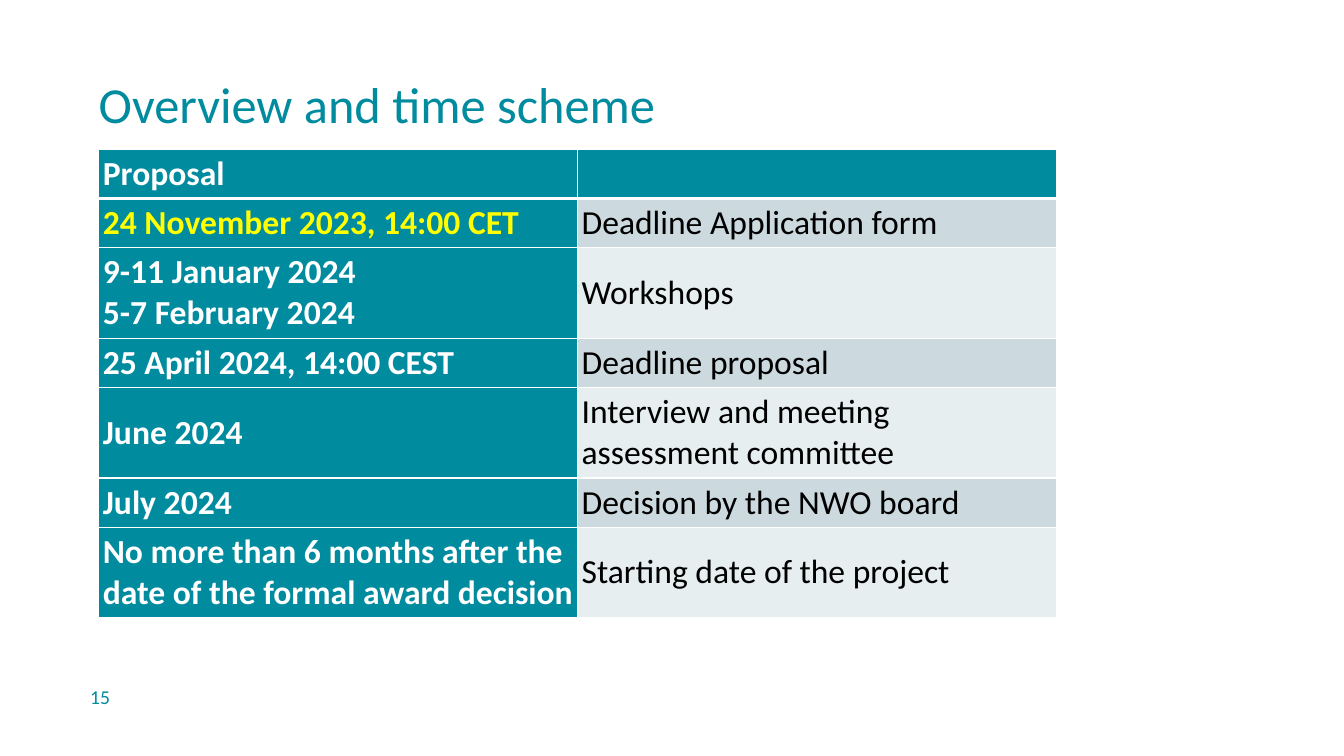
from lxml.etree import SubElement
from pptx import Presentation
from pptx.dml.color import RGBColor
from pptx.enum.text import MSO_ANCHOR as Anchor, MSO_AUTO_SIZE as AutoSize, PP_ALIGN as Align
from pptx.oxml.ns import qn
from pptx.util import Emu, Pt

TEAL, WHITE, BLACK, YELLOW = "008B9F", "FFFFFF", "000000", "FFFF00"
BANDS = ("E7EEF0", "CCDADF")
COL_W, LINE_ROW_H, TWO_LINE_ROW_H = 456, 47, 86

# (left text, right text, row height)
SCHEDULE = [
    ("Proposal", "", LINE_ROW_H),
    ("24 November 2023, 14:00 CET", "Deadline Application form", LINE_ROW_H),
    ("9-11 January 2024\n5-7 February 2024", "Workshops", TWO_LINE_ROW_H),
    ("25 April 2024, 14:00 CEST", "Deadline proposal", LINE_ROW_H),
    ("June 2024", "Interview and meeting assessment committee", TWO_LINE_ROW_H),
    ("July 2024", "Decision by the NWO board", LINE_ROW_H),
    ("No more than 6 months after the date of the formal award decision",
     "Starting date of the project", TWO_LINE_ROW_H),
]


def px(n):
    """Pixels at 96 to the inch, as EMU."""
    return Emu(n * 9525)


def rgb(code):
    return RGBColor.from_string(code)


def write(tf, text, size=24, color=BLACK, bold=False, font="Calibri", spacing=None):
    """Fill a text frame, one paragraph per line of text."""
    for i, line in enumerate(text.split("\n")):
        p = tf.paragraphs[0] if i == 0 else tf.add_paragraph()
        p.alignment = Align.LEFT
        p.line_spacing = spacing
        p.font.size = Pt(size)
        if line:
            r = p.add_run()
            r.text = line
            r.font.name, r.font.size, r.font.bold = font, Pt(size), bold
            r.font.color.rgb = rgb(color)


def set_border(cell, side, width, color=WHITE):
    ln = SubElement(cell._tc.get_or_add_tcPr(), qn(f"a:ln{side}"), w=str(Pt(width)))
    SubElement(SubElement(ln, qn("a:solidFill")), qn("a:srgbClr"), val=color)


class SlideBuilder:
    def __init__(self, prs):
        self.s = prs.slides.add_slide(prs.slide_layouts[5])

    def frame(self, sp, anchor):
        tf = sp.text_frame
        tf.word_wrap, tf.auto_size, tf.vertical_anchor = True, AutoSize.NONE, anchor
        tf.margin_left = tf.margin_right = tf.margin_top = tf.margin_bottom = 0
        return tf

    def title(self, text, x, y, w, h):
        sp = self.s.shapes.title
        sp.left, sp.top, sp.width, sp.height = map(px, (x, y, w, h))
        write(self.frame(sp, Anchor.TOP), text, size=36, color=TEAL, spacing=0.9)

    def text(self, text, x, y, w, h, **fmt):
        sp = self.s.shapes.add_textbox(*map(px, (x, y, w, h)))
        write(self.frame(sp, Anchor.MIDDLE), text, **fmt)

    def cell(self, cell, text, fill, bottom=1, top=1, **fmt):
        cell.margin_left = cell.margin_right = px(4)
        cell.margin_top = cell.margin_bottom = px(4)
        cell.vertical_anchor = Anchor.MIDDLE
        for side, width in (("L", 1), ("R", 1), ("T", top), ("B", bottom)):
            set_border(cell, side, width)
        cell.fill.solid()
        cell.fill.fore_color.rgb = rgb(fill)
        write(cell.text_frame, text, **fmt)

    def schedule(self, rows, x, y):
        height = sum(h for *_, h in rows)
        table = self.s.shapes.add_table(
            len(rows), 2, px(x), px(y), px(2 * COL_W), px(height)).table
        for col in table.columns:
            col.width = px(COL_W)
        for i, (when, what, h) in enumerate(rows):
            table.rows[i].height = px(h)
            edges = {"bottom": 3 if i == 0 else 1, "top": 3 if i == 1 else 1}
            self.cell(table.cell(i, 0), when, TEAL, bold=True,
                      color=YELLOW if i == 1 else WHITE, **edges)
            self.cell(table.cell(i, 1), what, BANDS[i % 2] if i else TEAL, **edges)


def main():
    prs = Presentation()
    prs.slide_width, prs.slide_height = px(1280), px(720)
    slide = SlideBuilder(prs)
    slide.title("Overview and time scheme", 94, 76, 983, 57)
    slide.text("15", 86, 652, 49, 23, size=14, color=TEAL)
    slide.schedule(SCHEDULE, 94, 142)
    prs.save("out.pptx")


if __name__ == "__main__":
    main()
